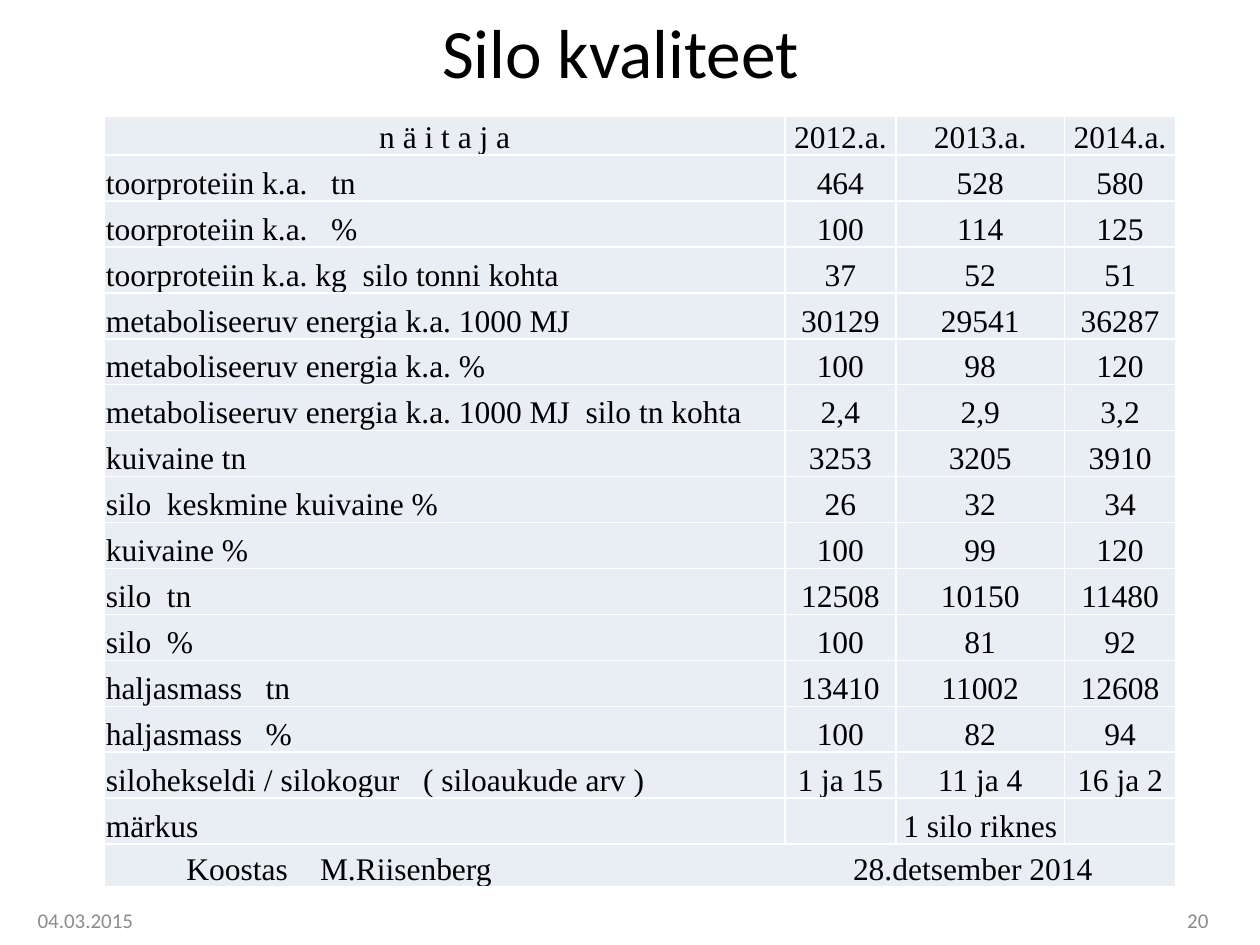
from dataclasses import dataclass

from lxml import etree
from pptx import Presentation
from pptx.dml.color import RGBColor
from pptx.enum import text
from pptx.oxml import ns
from pptx.util import Inches, Pt


@dataclass(frozen=True)
class Theme:
    ink: str = "000000"
    muted: str = "8C8C8C"
    cell: str = "E9EDF4"
    border: str = "FFFFFF"
    heading_font: str = "Calibri"
    table_font: str = "Times New Roman"
    title_size: float = 39.6
    table_size: float = 18
    footer_size: float = 12


@dataclass(frozen=True)
class Label:
    content: str
    left: float
    top: float
    width: float
    height: float
    size: float
    color: str
    align: text.PP_ALIGN


THEME = Theme()
LEFT, CENTER, RIGHT = text.PP_ALIGN.LEFT, text.PP_ALIGN.CENTER, text.PP_ALIGN.RIGHT

LABELS = [
    Label("Silo kvaliteet", 1.38, 0.21, 7.09, 0.39, THEME.title_size, THEME.ink, CENTER),
    Label("04.03.2015", 0.2, 7.1, 2.33, 0.4, THEME.footer_size, THEME.muted, LEFT),
    Label("20", 7.36, 7.1, 2.33, 0.4, THEME.footer_size, THEME.muted, RIGHT),
]

ROWS = [
    ("n ä i t a j a", "2012.a.", "2013.a.", "2014.a."),
    ("toorproteiin k.a.   tn", "464", "528", "580"),
    ("toorproteiin k.a.   %", "100", "114", "125"),
    ("toorproteiin k.a. kg  silo tonni kohta", "37", "52", "51"),
    ("metaboliseeruv energia k.a. 1000 MJ", "30129", "29541", "36287"),
    ("metaboliseeruv energia k.a. %", "100", "98", "120"),
    ("metaboliseeruv energia k.a. 1000 MJ  silo tn kohta", "2,4", "2,9", "3,2"),
    ("kuivaine tn", "3253", "3205", "3910"),
    ("silo  keskmine kuivaine %", "26", "32", "34"),
    ("kuivaine %", "100", "99", "120"),
    ("silo  tn", "12508", "10150", "11480"),
    ("silo  %", "100", "81", "92"),
    ("haljasmass   tn", "13410", "11002", "12608"),
    ("haljasmass   %", "100", "82", "94"),
    ("silohekseldi / silokogur   ( siloaukude arv )", "1 ja 15", "11 ja 4", "16 ja 2"),
    ("märkus", "", "1 silo riknes", ""),
    ("Koostas\tM.Riisenberg\t28.detsember 2014", "", "", ""),
]
COLUMNS = (5.4, 0.88, 1.34, 0.88)
TABLE_LEFT, TABLE_TOP, TABLE_HEIGHT = 0.83, 0.92, 6.09
HEADER_HEIGHT, CREDIT_HEIGHT = 0.28, 0.34
CREDIT_INDENT, CREDIT_TABS = 0.65, (1.06, 5.29)


def format_paragraph(p, font: str, size: float, color: str, align: text.PP_ALIGN) -> None:
    p.alignment = align
    for r in p.runs:
        r.font.name = font
        r.font.size = Pt(size)
        r.font.color.rgb = RGBColor.from_string(color)


def add_label(s, label: Label) -> None:
    sp = s.shapes.add_textbox(Inches(label.left), Inches(label.top),
                              Inches(label.width), Inches(label.height))
    tf = sp.text_frame
    tf.word_wrap = True
    tf.vertical_anchor = text.MSO_ANCHOR.MIDDLE
    tf.text = label.content
    format_paragraph(tf.paragraphs[0], THEME.heading_font, label.size, label.color, label.align)


def add_borders(cell) -> None:
    tc_pr = cell._tc.get_or_add_tcPr()
    for i, side in enumerate(("lnL", "lnR", "lnT", "lnB")):
        ln = etree.Element(ns.qn(f"a:{side}"), w=str(Pt(1)))
        fill = etree.SubElement(ln, ns.qn("a:solidFill"))
        etree.SubElement(fill, ns.qn("a:srgbClr"), val=THEME.border)
        tc_pr.insert(i, ln)


def fill_cell(cell, content: str, align: text.PP_ALIGN) -> None:
    cell.margin_left = cell.margin_right = cell.margin_top = Inches(0.01)
    cell.margin_bottom = 0
    cell.vertical_anchor = text.MSO_ANCHOR.BOTTOM
    cell.fill.solid()
    cell.fill.fore_color.rgb = RGBColor.from_string(THEME.cell)
    add_borders(cell)
    p = cell.text_frame.paragraphs[0]
    p.text = content
    p.font.size = Pt(THEME.table_size)
    format_paragraph(p, THEME.table_font, THEME.table_size, THEME.ink, align)


def add_tab_stops(p, stops: tuple[float, ...]) -> None:
    p_pr = p._p.get_or_add_pPr()
    tab_list = etree.Element(ns.qn("a:tabLst"))
    for stop in stops:
        etree.SubElement(tab_list, ns.qn("a:tab"), pos=str(Inches(stop)), algn="l")
    default_run = p_pr.find(ns.qn("a:defRPr"))
    default_run.addprevious(tab_list)


def add_silage_table(s) -> None:
    frame = s.shapes.add_table(len(ROWS), len(COLUMNS), Inches(TABLE_LEFT), Inches(TABLE_TOP),
                               Inches(sum(COLUMNS)), Inches(TABLE_HEIGHT))
    table = frame.table
    for column, width in zip(table.columns, COLUMNS):
        column.width = Inches(width)

    # The body rows share the height left by the first and last rows
    body_height = (TABLE_HEIGHT - HEADER_HEIGHT - CREDIT_HEIGHT) / (len(ROWS) - 2)
    heights = [HEADER_HEIGHT, *[body_height] * (len(ROWS) - 2), CREDIT_HEIGHT]
    for i, (values, height) in enumerate(zip(ROWS, heights)):
        table.rows[i].height = Inches(height)
        for j, value in enumerate(values):
            fill_cell(table.cell(i, j), value, LEFT if i and j == 0 else CENTER)

    # Author and date share one merged row, set apart by tab stops
    last = len(ROWS) - 1
    credit = table.cell(last, 0)
    credit.merge(table.cell(last, len(COLUMNS) - 1))
    credit.margin_left = Inches(CREDIT_INDENT)
    add_tab_stops(credit.text_frame.paragraphs[0], CREDIT_TABS)


def main() -> None:
    prs = Presentation()
    prs.slide_width, prs.slide_height = Inches(10), Inches(7.5)
    s = prs.slides.add_slide(prs.slide_layouts[6])

    # Title, date and page number
    for label in LABELS:
        add_label(s, label)

    # Silage quality figures
    add_silage_table(s)
    prs.save("out.pptx")


if __name__ == "__main__":
    main()
